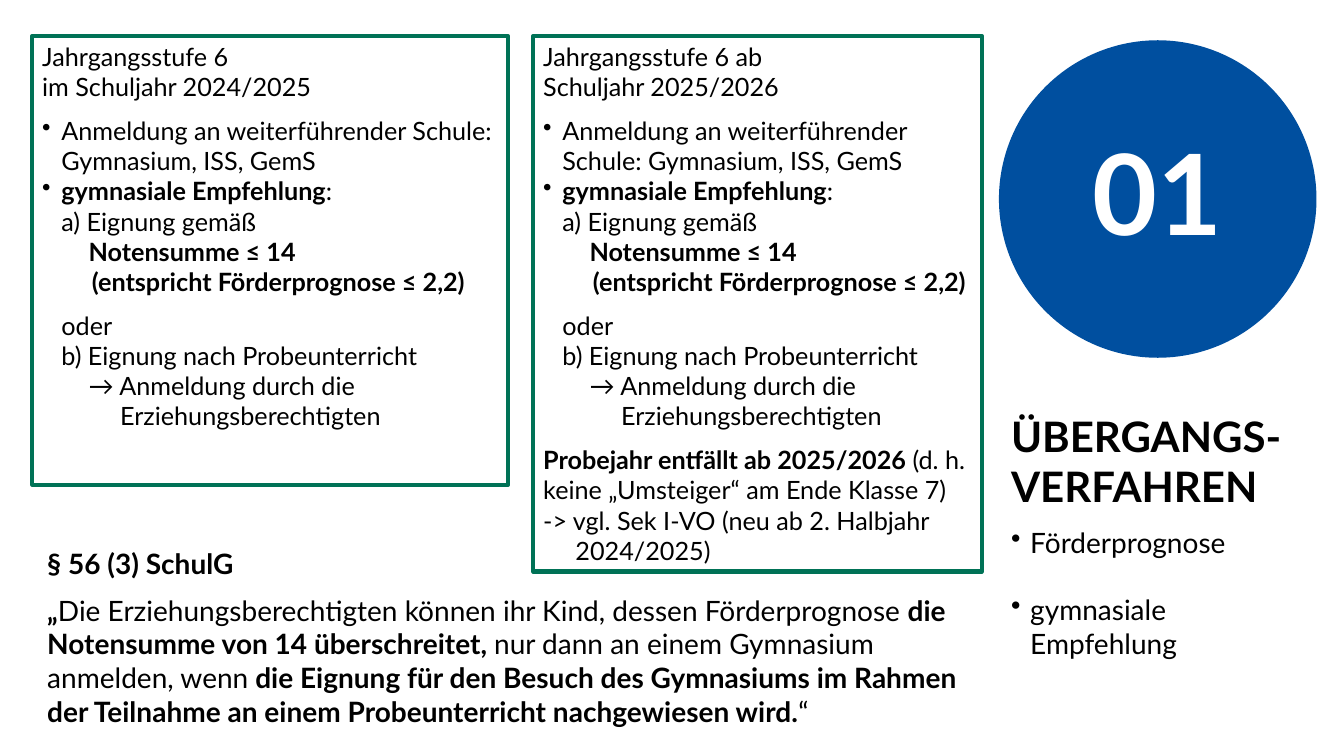
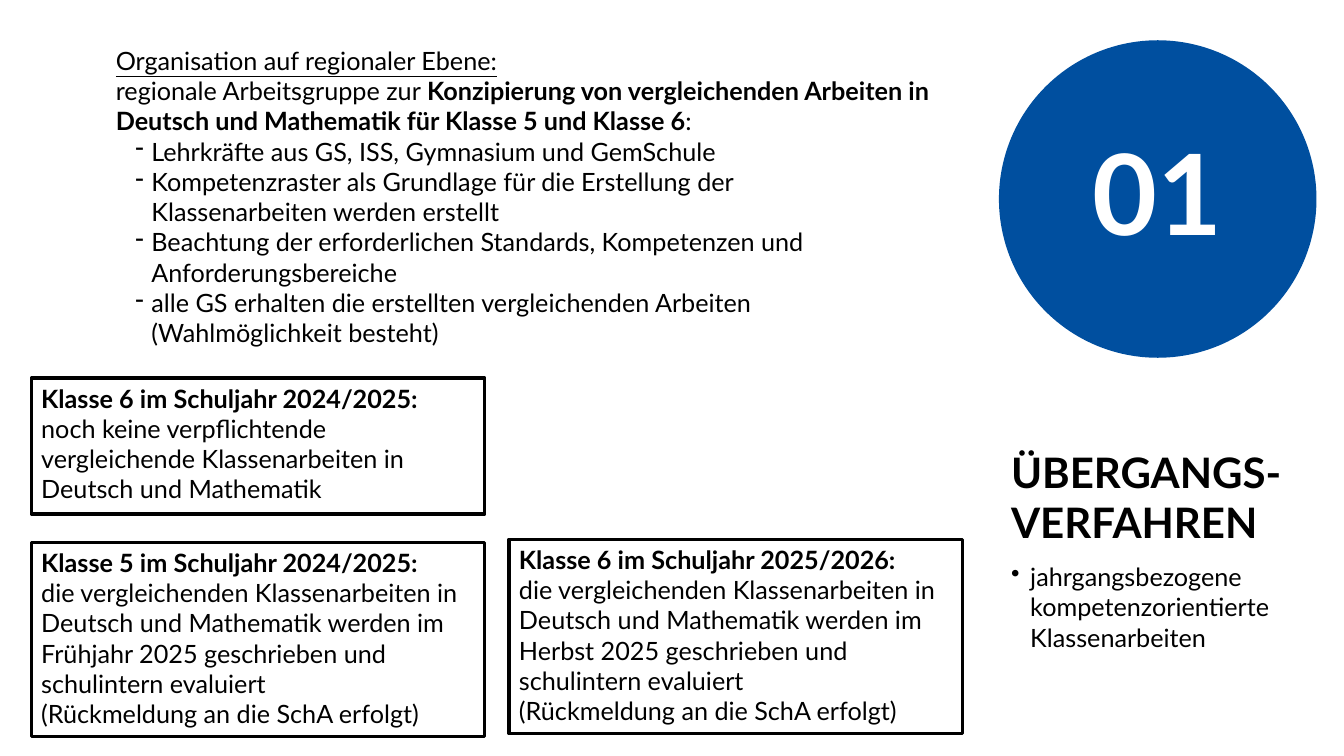
"""Build two slides on the transition procedure after primary school."""
from lxml.etree import SubElement
from pptx import Presentation
from pptx.dml.color import RGBColor
from pptx.enum.shapes import MSO_SHAPE
from pptx.enum.text import MSO_ANCHOR, PP_ALIGN
from pptx.oxml.ns import qn
from pptx.util import Inches, Pt

COLORS = {"blue": "004F9F", "green": "007256", "black": "000000", "white": "FFFFFF"}
FONT = "Lato"
GAP = 9.6
SIDE_LEFT, SIDE_WIDTH = 75.23, 21.75
INDENTS = {
    "plain": (0, 0, None),
    "bullet": (1.43, 1.43, "•"),
    "dash": (2.65, 1.2, "-"),
    "option": (1.43, 0, None),
    "detail": (3.45, 0, None),
    "remark": (3.7, 0, None),
    "deep": (5.8, 0, None),
    "rest": (2.4, 0, None),
}

deck = Presentation()
deck.slide_width, deck.slide_height = Inches(13.333), Inches(7.5)


def share(left, top, width, height):
    """Turn percentages of the slide's size into lengths."""
    across, down = deck.slide_width / 100, deck.slide_height / 100
    return int(left * across), int(top * down), int(width * across), int(height * down)


def write(shape, entries, size=18, color="black", inset=True, anchor=MSO_ANCHOR.TOP):
    """Fill a shape with (text, indent, gap) entries; asterisks enclose bold words."""
    frame = shape.text_frame
    frame.word_wrap = True
    frame.vertical_anchor = anchor
    if not inset:
        frame.margin_left = frame.margin_right = frame.margin_top = frame.margin_bottom = 0
    for number, (text, indent, gap) in enumerate(entries):
        paragraph = frame.add_paragraph() if number else frame.paragraphs[0]
        paragraph.alignment = PP_ALIGN.LEFT
        paragraph.space_before = Pt(gap)
        margin, hanging, bullet = INDENTS[indent]
        properties = paragraph._p.get_or_add_pPr()
        properties.set("marL", str(int(margin * deck.slide_width / 100)))
        properties.set("indent", str(int(-hanging * deck.slide_width / 100)))
        if bullet:
            SubElement(properties, qn("a:buChar")).set("char", bullet)
        for position, words in enumerate(text.split("*")):
            for row, line in enumerate(words.split("\n")):
                if row:
                    paragraph.add_line_break()
                if line:
                    run = paragraph.add_run()
                    run.text = line
                    run.font.name, run.font.size = FONT, Pt(size)
                    run.font.bold = position % 2 == 1
                    run.font.color.rgb = RGBColor.from_string(COLORS[color])
    return frame


recommendation = [
    ("Anmeldung an weiterführender Schule: Gymnasium, ISS, GemS", "bullet", GAP),
    ("*gymnasiale Empfehlung*:", "bullet", 0),
    ("a) Eignung gemäß", "option", 0),
    ("*Notensumme ≤ 14*", "detail", 0),
    ("*(entspricht Förderprognose ≤ 2,2)*", "remark", 0),
    ("oder", "option", GAP),
    ("b) Eignung nach Probeunterricht", "option", 0),
    ("→ Anmeldung durch die", "detail", 0),
    ("Erziehungsberechtigten", "deep", 0),
]
year_2024 = [
    ("Jahrgangsstufe 6", "plain", 0),
    ("im Schuljahr 2024/2025", "plain", 0),
    *recommendation,
]
year_2025 = [
    ("Jahrgangsstufe 6 ab", "plain", 0),
    ("Schuljahr 2025/2026", "plain", 0),
    *recommendation,
    ("*Probejahr entfällt ab 2025/2026* (d. h. keine „Umsteiger“ am Ende Klasse 7)", "plain", GAP),
    ("-> vgl. Sek I-VO (neu ab 2. Halbjahr", "plain", 0),
    ("2024/2025)", "rest", 0),
]
law = [
    ("*§ 56 (3) SchulG*", "plain", 0),
    ("*„*Die Erziehungsberechtigten können ihr Kind, dessen Förderprognose *die Notensumme "
     "von 14 überschreitet, *nur dann an einem Gymnasium anmelden, wenn* die Eignung für den "
     "Besuch des Gymnasiums im Rahmen der Teilnahme an einem Probeunterricht nachgewiesen "
     "wird.*“", "plain", GAP),
]
organisation = [
    ("Organisation auf regionaler Ebene:", "plain", 0),
    ("regionale Arbeitsgruppe zur *Konzipierung von vergleichenden Arbeiten in Deutsch und "
     "Mathematik für Klasse 5 und Klasse 6*:", "plain", 0),
    ("Lehrkräfte aus GS, ISS, Gymnasium und GemSchule", "dash", 0),
    ("Kompetenzraster als Grundlage für die Erstellung der\n"
     "Klassenarbeiten werden erstellt", "dash", 0),
    ("Beachtung der erforderlichen Standards, Kompetenzen und\nAnforderungsbereiche", "dash", 0),
    ("alle GS erhalten die erstellten vergleichenden Arbeiten\n"
     "(Wahlmöglichkeit besteht)", "dash", 0),
]
evaluation = ("die vergleichenden Klassenarbeiten in Deutsch und Mathematik werden im {} "
              "geschrieben und schulintern evaluiert")
feedback = "(Rückmeldung an die SchA erfolgt)"
classes = [
    ((2.33, 50, 33.75, 18), "Klasse 6 im Schuljahr 2024/2025:",
     ["noch keine verpflichtende vergleichende Klassenarbeiten in Deutsch und Mathematik"]),
    ((2.33, 71.73, 33.75, 25.73), "Klasse 5 im Schuljahr 2024/2025:",
     [evaluation.format("Frühjahr 2025"), feedback]),
    ((37.88, 71.33, 33.75, 25.73), "Klasse 6 im Schuljahr 2025/2026:",
     [evaluation.format("Herbst 2025"), feedback]),
]
class_boxes = [
    (place, [(f"*{heading}*", "plain", 0)] + [(line, "plain", 0) for line in lines])
    for place, heading, lines in classes
]

pages = [
    {
        "topics": [("Förderprognose", "bullet", 0), ("gymnasiale Empfehlung", "bullet", 24)],
        "topics_top": 69.47, "topics_size": 20,
        "boxes": [((2.4, 4.8, 35.4, 59.33), year_2024), ((39.68, 4.8, 33.38, 70.8), year_2025)],
        "border": "green", "border_width": 3,
        "passage": law, "passage_place": (2.78, 71.6, 70.13, 26),
        "passage_size": 20, "underlined": False,
    },
    {
        "topics": [("jahrgangsbezogene kompetenzorientierte Klassenarbeiten", "bullet", 0)],
        "topics_top": 74.27, "topics_size": 18,
        "boxes": class_boxes,
        "border": "black", "border_width": 2.25,
        "passage": organisation, "passage_place": (7.88, 5.33, 63.68, 43),
        "passage_size": 18, "underlined": True,
    },
]

for page in pages:
    slide = deck.slides.add_slide(deck.slide_layouts[6])
    shapes = slide.shapes

    disc = shapes.add_shape(MSO_SHAPE.OVAL, *share(74.33, 5.33, 23.63, 42))
    disc.shadow.inherit = False
    disc.fill.solid()
    disc.fill.fore_color.rgb = RGBColor.from_string(COLORS["blue"])
    disc.line.fill.background()

    chapter = shapes.add_textbox(*share(SIDE_LEFT, 17.6, SIDE_WIDTH, 17.6))
    numeral = write(chapter, [("*01*", "plain", 0)], 80, "white", False, MSO_ANCHOR.MIDDLE)
    numeral.paragraphs[0].alignment = PP_ALIGN.CENTER
    numeral.paragraphs[0].line_spacing = 0.9

    title_top = page["topics_top"] - 1.87 - 16
    title = shapes.add_textbox(*share(SIDE_LEFT, title_top, SIDE_WIDTH, 16))
    write(title, [("*ÜBERGANGS-VERFAHREN*", "plain", 0)], 30, inset=False,
          anchor=MSO_ANCHOR.BOTTOM)

    topics = shapes.add_textbox(*share(SIDE_LEFT, page["topics_top"], SIDE_WIDTH, 20.8))
    write(topics, page["topics"], page["topics_size"], inset=False)

    for place, entries in page["boxes"]:
        box = shapes.add_shape(MSO_SHAPE.RECTANGLE, *share(*place))
        box.shadow.inherit = False
        box.fill.background()
        box.line.color.rgb = RGBColor.from_string(COLORS[page["border"]])
        box.line.width = Pt(page["border_width"])
        write(box, entries)

    passage = shapes.add_textbox(*share(*page["passage_place"]))
    passage_text = write(passage, page["passage"], page["passage_size"])
    passage_text.paragraphs[0].runs[0].font.underline = page["underlined"]

deck.save("out.pptx")
